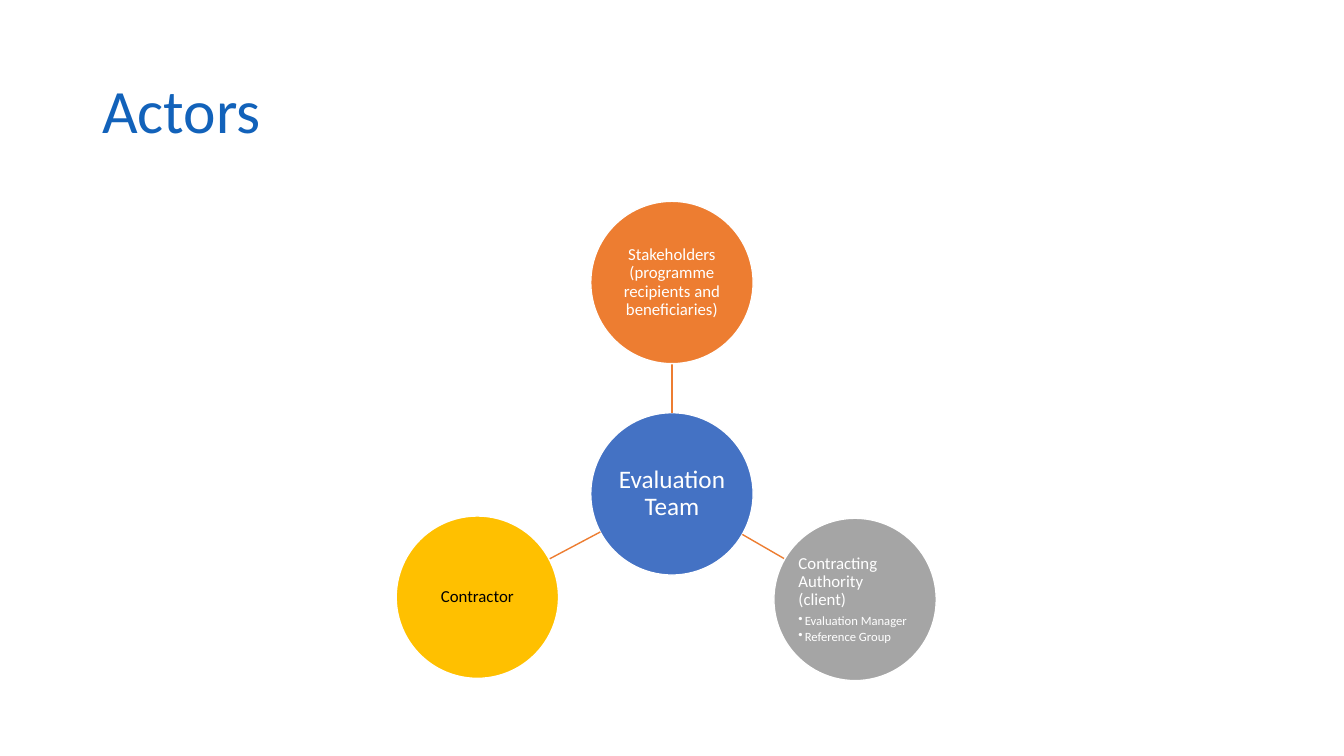
from dataclasses import dataclass
from math import hypot

from lxml.etree import SubElement
from pptx import Presentation
from pptx.dml.color import RGBColor
from pptx.enum.shapes import MSO_CONNECTOR, MSO_SHAPE
from pptx.enum.text import MSO_ANCHOR, PP_ALIGN
from pptx.oxml.ns import qn
from pptx.util import Pt

COLORS = {
    "title": "1262BA",
    "blue": "4472C4",
    "orange": "ED7D31",
    "gray": "A5A5A5",
    "gold": "FFC000",
    "white": "FFFFFF",
    "black": "000000",
}
FONT = "Calibri"
RADIUS = 58


@dataclass(frozen=True)
class Actor:
    text: str
    x: float
    y: float
    fill: str
    size: float = 12
    color: str = "white"
    align: PP_ALIGN = PP_ALIGN.CENTER
    bullets: tuple[str, ...] = ()


HUB = Actor("Evaluation Team", 480, 352.8, "blue", size=18)
SPOKES = (
    Actor("Stakeholders (programme recipients and beneficiaries)", 480, 201.8, "orange"),
    Actor("Contracting Authority (client)", 610.8, 428.2, "gray", align=PP_ALIGN.LEFT,
          bullets=("Evaluation Manager", "Reference Group")),
    Actor("Contractor", 341, 426.6, "gold", color="black"),
)


def rgb(name: str) -> RGBColor:
    return RGBColor.from_string(COLORS[name])


def add_text(tf, text: str, *, size: float, color: str, align: PP_ALIGN = PP_ALIGN.LEFT,
             after: float = 0, bullet: bool = False, first: bool = True) -> None:
    p = tf.paragraphs[0] if first else tf.add_paragraph()
    p.alignment = align
    p.line_spacing = 0.9
    p.space_after = Pt(after)
    if bullet:
        p.level = 1
        pPr = p._p.get_or_add_pPr()
        pPr.set("marL", str(Pt(4.5)))
        pPr.set("indent", str(Pt(-4.5)))
        SubElement(pPr, qn("a:buChar")).set("char", "•")
    r = p.add_run()
    r.text = text
    r.font.name = FONT
    r.font.size = Pt(size)
    r.font.color.rgb = rgb(color)


def add_title(s, text: str) -> None:
    tf = s.shapes.add_textbox(Pt(66), Pt(28.75), Pt(828), Pt(104.4)).text_frame
    tf.word_wrap = True
    tf.vertical_anchor = MSO_ANCHOR.MIDDLE
    add_text(tf, text, size=44, color="title")


def add_actor(s, actor: Actor) -> None:
    sp = s.shapes.add_shape(MSO_SHAPE.OVAL, Pt(actor.x - RADIUS), Pt(actor.y - RADIUS),
                            Pt(2 * RADIUS), Pt(2 * RADIUS))
    sp.shadow.inherit = False
    sp.fill.solid()
    sp.fill.fore_color.rgb = rgb(actor.fill)
    sp.line.color.rgb = rgb("white")
    sp.line.width = Pt(1)
    tf = sp.text_frame
    tf.word_wrap = True
    tf.vertical_anchor = MSO_ANCHOR.MIDDLE
    tf.margin_left = tf.margin_right = tf.margin_top = tf.margin_bottom = Pt(0.6)
    add_text(tf, actor.text, size=actor.size, color=actor.color, align=actor.align,
             after=0.35 * actor.size)
    for item in actor.bullets:
        add_text(tf, item, size=9, color=actor.color, after=1.35, bullet=True, first=False)


def add_link(s, start: Actor, end: Actor) -> None:
    dx, dy = end.x - start.x, end.y - start.y
    trim = RADIUS / hypot(dx, dy)
    line = s.shapes.add_connector(
        MSO_CONNECTOR.STRAIGHT,
        Pt(start.x + trim * dx), Pt(start.y + trim * dy),
        Pt(end.x - trim * dx), Pt(end.y - trim * dy))
    line.line.color.rgb = rgb("orange")
    line.line.width = Pt(1)
    SubElement(line._element.spPr, qn("a:effectLst"))


def main() -> None:
    prs = Presentation()
    prs.slide_width, prs.slide_height = Pt(960), Pt(540)
    s = prs.slides.add_slide(prs.slide_layouts[6])
    add_title(s, "Actors")
    add_actor(s, HUB)
    for actor in SPOKES:
        add_link(s, HUB, actor)
        add_actor(s, actor)
    prs.save("out.pptx")


if __name__ == "__main__":
    main()
